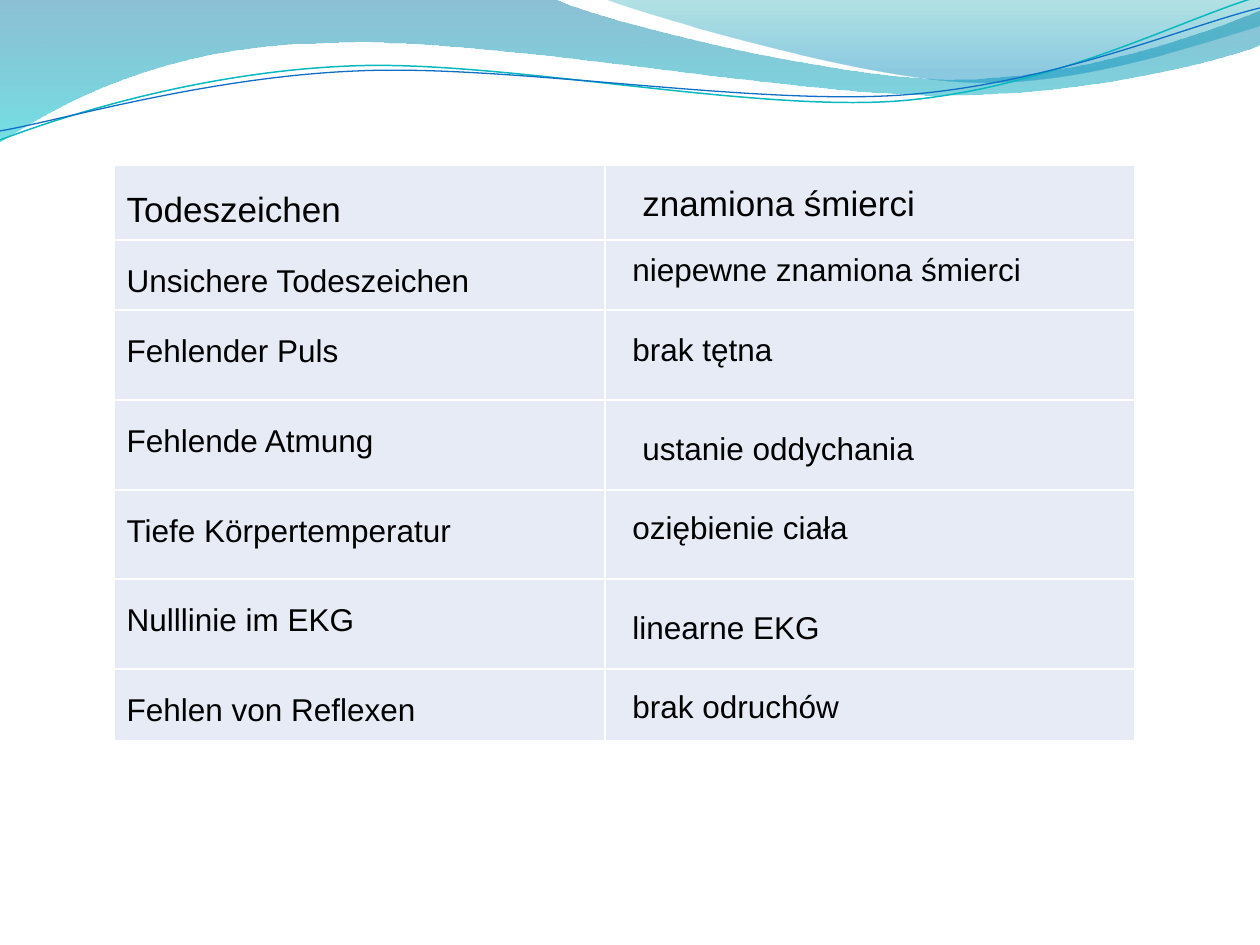
from itertools import accumulate

from lxml import etree
from pptx import Presentation
from pptx.dml.color import RGBColor
from pptx.enum.text import MSO_AUTO_SIZE
from pptx.oxml.ns import qn
from pptx.util import Pt

PX = 914400 / 126
FIT_SHAPE = MSO_AUTO_SIZE.SHAPE_TO_FIT_TEXT
FONT = "Arial"
BLACK = RGBColor(0x00, 0x00, 0x00)
WHITE = RGBColor(0xFF, 0xFF, 0xFF)
CELL = RGBColor(0xE7, 0xEB, 0xF5)
OCEAN = RGBColor(0x00, 0x74, 0xA1)
AQUA = RGBColor(0x00, 0xC6, 0xCF)
TEAL = RGBColor(0x00, 0xA1, 0xA9)
AZURE = RGBColor(0x00, 0x8B, 0xBF)
TURQUOISE = RGBColor(0x0A, 0xB8, 0xBF)
BLUE = RGBColor(0x0F, 0x6F, 0xC6)

LEFT_WAVE = [
    [(0, 0)], [(554, -1)],
    [(600, 21), (837, 79), (955, 79)], [(1075, 79), (1207, 33), (1260, 11)],
    [(1261, 45)],
    [(1239, 55), (1096, 96), (940, 95)], [(784, 95), (481, 35), (324, 43)],
    [(163, 45), (58, 105), (-1, 142)],
]
RIGHT_WAVE = [
    [(604, -1)],
    [(641, 14), (859, 78), (969, 82)], [(1079, 87), (1211, 40), (1260, 26)],
    [(1260, 0)],
]
UPPER_STRAND = [
    [(0, 140)], [(60, 117), (199, 72), (349, 66)],
    [(498, 59), (747, 112), (898, 101)], [(1050, 89), (1182, 19), (1257, -3)],
]
LOWER_STRAND = [
    [(0, 131)], [(59, 121), (207, 77), (357, 71)],
    [(508, 64), (752, 106), (903, 95)], [(1053, 84), (1186, 26), (1260, 8)],
]
WAVES = [
    (LEFT_WAVE, [(0, OCEAN, 45), (1, AQUA, 55)]),
    (RIGHT_WAVE, [(0, TEAL, 30), (0.8, AZURE, 45)]),
]
STRANDS = [(UPPER_STRAND, TURQUOISE, 0.85), (LOWER_STRAND, BLUE, 0.75)]

TABLE_LEFT, TABLE_TOP = 114, 165
COLUMNS = [491, 530]
ROWS = [75, 70, 90, 90, 89, 90, 72]
GERMAN = [
    "Todeszeichen", "Unsichere Todeszeichen", "Fehlender Puls", "Fehlende Atmung",
    "Tiefe Körpertemperatur", "Nulllinie im EKG", "Fehlen von Reflexen",
]
POLISH = [
    ("znamiona śmierci", 25, 10, 476),
    ("niepewne znamiona śmierci", 15, 4, 496),
    ("brak tętna", 15, 14, 456),
    ("ustanie oddychania", 25, 23, 486),
    ("oziębienie ciała", 15, 12, 507),
    ("linearne EKG", 15, 23, 486),
    ("brak odruchów", 15, 12, 496),
]
SIZES = [20] + [18] * 6


def px(length):
    """Turn a length in px into EMU."""
    return round(length * PX)


def add_outline(page, left, top, pieces, close):
    """Draw a freeform whose three-point pieces are Bézier curves."""
    start, *rest = [(px(left + x), px(top + y)) for piece in pieces for x, y in piece]
    builder = page.shapes.build_freeform(*start, scale=1.0)
    builder.add_line_segments(rest, close=close)
    shape = builder.convert_to_shape()
    shape.shadow.inherit = False
    segments = iter(list(shape._element.iter(qn("a:lnTo"))))
    for piece in pieces[1:]:
        first, *others = [next(segments) for _ in piece]
        if others:
            first.tag = qn("a:cubicBezTo")
        for other in others:
            first.append(other[0])
            other.getparent().remove(other)
    return shape


def add_waves(page, left, top):
    """Place the shaded waves and the thin strands over them."""
    for pieces, stops in WAVES:
        wave = add_outline(page, left, top, pieces, True)
        wave.line.fill.background()
        wave.fill.gradient()
        wave.fill.gradient_angle = 270
        for stop, (position, color, _) in zip(wave.fill.gradient_stops, stops):
            stop.position = position
            stop.color.rgb = color
        tints = wave._element.iter(qn("a:srgbClr"))
        for tint, (_, _, opacity) in zip(tints, stops):
            etree.SubElement(tint, qn("a:alpha"), val=str(opacity * 1000))
    for pieces, color, width in STRANDS:
        strand = add_outline(page, left, top, pieces, False)
        strand.fill.background()
        strand.line.color.rgb = color
        strand.line.width = Pt(width)


def add_span(para, text, size):
    """Add one run of black text."""
    span = para.add_run()
    span.text = text
    span.font.name = FONT
    span.font.size = Pt(size)
    span.font.color.rgb = BLACK


def style_cell(cell):
    """Give a cell its white borders and pale fill."""
    properties = cell._tc.get_or_add_tcPr()
    for side in ("a:lnL", "a:lnR", "a:lnT", "a:lnB"):
        border = etree.SubElement(properties, qn(side), w=str(Pt(1)))
        fill = etree.SubElement(border, qn("a:solidFill"))
        etree.SubElement(fill, qn("a:srgbClr"), val=str(WHITE))
    cell.fill.solid()
    cell.fill.fore_color.rgb = CELL


def add_terms_table(page, left, top):
    """Place the table with the German terms."""
    frame = page.shapes.add_table(
        len(ROWS), len(COLUMNS), px(left), px(top), px(sum(COLUMNS)), px(sum(ROWS))
    )
    table = frame.table
    table.first_row = table.horz_banding = False
    for column, width in zip(table.columns, COLUMNS):
        column.width = px(width)
    for row, height, term, size in zip(table.rows, ROWS, GERMAN, SIZES):
        row.height = px(height)
        for cell in row.cells:
            style_cell(cell)
        para = row.cells[0].text_frame.paragraphs[0]
        para.line_spacing = 1.5
        add_span(para, term, size)


def add_translations(page, left, top):
    """Place the Polish terms over the right column, row by row."""
    row_tops = accumulate(ROWS, initial=top)
    for (term, indent, drop, width), row_top, size in zip(POLISH, row_tops, SIZES):
        height = 55 if size == 20 else 50
        box = page.shapes.add_textbox(
            px(left + indent), px(row_top + drop), px(width), px(height)
        )
        box.text_frame.word_wrap = True
        box.text_frame.auto_size = FIT_SHAPE
        add_span(box.text_frame.paragraphs[0], term, size)


def main():
    """Build the deck and save it."""
    deck = Presentation()
    deck.slide_width, deck.slide_height = px(1260), px(945)
    page = deck.slides.add_slide(deck.slide_layouts[6])
    page.background.fill.solid()
    page.background.fill.fore_color.rgb = WHITE
    add_waves(page, 0, 0)
    add_terms_table(page, TABLE_LEFT, TABLE_TOP)
    add_translations(page, TABLE_LEFT + COLUMNS[0], TABLE_TOP)
    deck.save("out.pptx")


if __name__ == "__main__":
    main()
